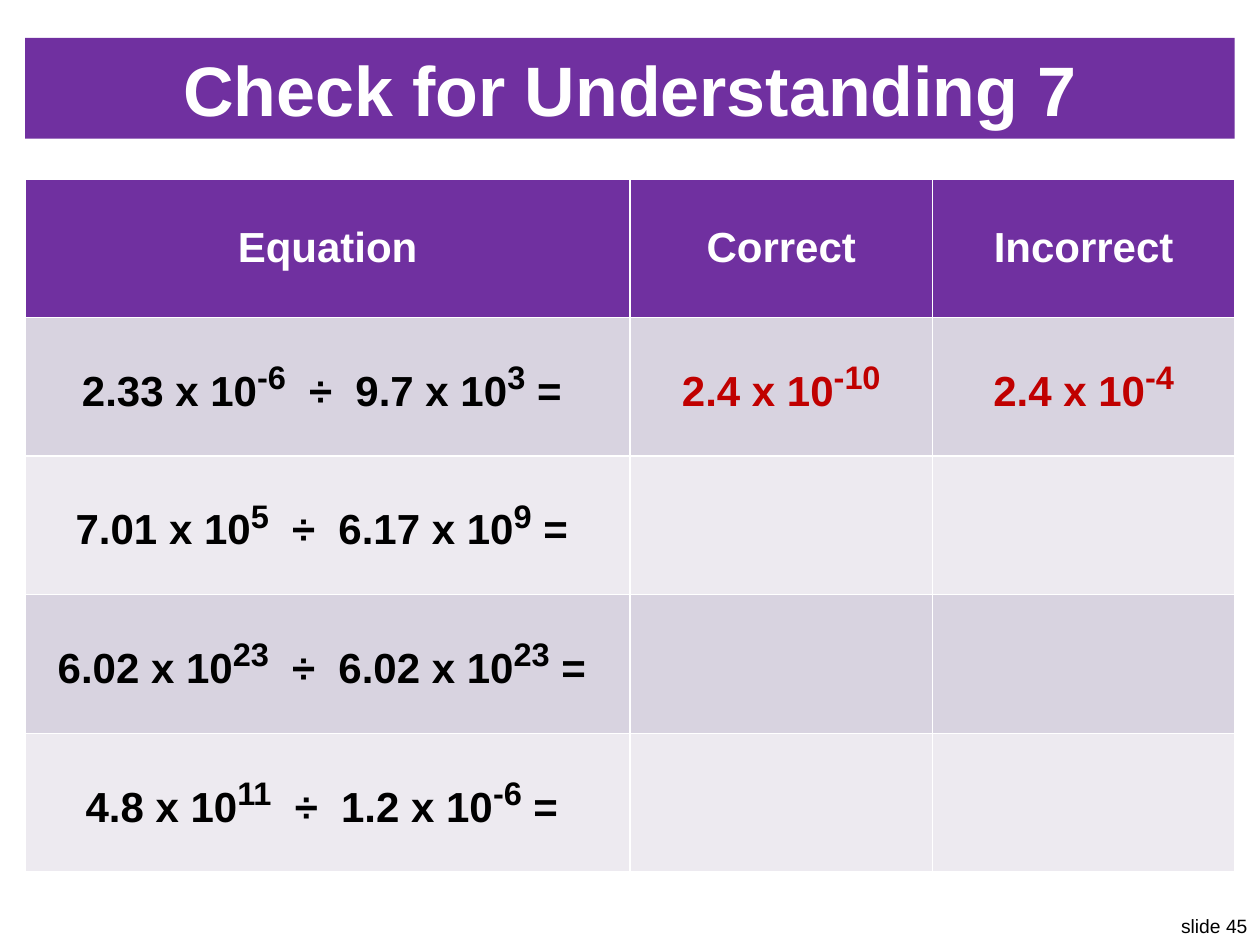
from pptx import Presentation
from pptx.dml.color import RGBColor
from pptx.enum.shapes import MSO_SHAPE
from pptx.enum.text import MSO_ANCHOR, MSO_AUTO_SIZE, PP_ALIGN
from pptx.util import Inches, Pt

RECTANGLE = MSO_SHAPE.RECTANGLE
MIDDLE = MSO_ANCHOR.MIDDLE
GROW = MSO_AUTO_SIZE.SHAPE_TO_FIT_TEXT
CENTER, RIGHT = PP_ALIGN.CENTER, PP_ALIGN.RIGHT

COLORS = {
    "purple": "7030A0",
    "white": "FFFFFF",
    "black": "000000",
    "red": "C00000",
    "band_dark": "D8D3E0",
    "band_light": "EDEAF0",
}
HEADERS = ["Equation", "Correct", "Incorrect"]
PROBLEMS = [
    ["2.33 x 10^-6^  ÷  9.7 x 10^3^ = ", "2.4 x 10^-10^", "2.4 x 10^-4^"],
    ["7.01 x 10^5^  ÷  6.17 x 10^9^ = ", "", ""],
    ["6.02 x 10^23^  ÷  6.02 x 10^23^ = ", "", ""],
    ["4.8 x 10^11^  ÷  1.2 x 10^-6^ = ", "", ""],
]
COLUMN_SHARES = [0.5, 0.25, 0.25]


def color(name):
    """Return the named colour."""
    return RGBColor.from_string(COLORS[name])


def fill_with(target, name):
    """Give a shape or cell a solid fill."""
    target.fill.solid()
    target.fill.fore_color.rgb = color(name)


def write_text(frame, text, size=24, power_size=32, ink="black", bold=True, align=CENTER):
    """Write one paragraph, raising the parts between carets as exponents."""
    paragraph = frame.paragraphs[0]
    paragraph.alignment = align
    for index, part in enumerate(text.split("^")):
        if not part:
            continue
        is_power = index % 2 == 1
        run = paragraph.add_run()
        run.text = part
        run.font.name = "Arial"
        run.font.size = Pt(power_size if is_power else size)
        run.font.bold = bold
        run.font.color.rgb = color(ink)
        if is_power:
            run._r.get_or_add_rPr().set("baseline", "30000")


def add_title(slide, left, top, width, height):
    """Add the title banner."""
    shape = slide.shapes.add_shape(RECTANGLE, left, top, width, height)
    shape.shadow.inherit = False
    shape.line.fill.background()
    fill_with(shape, "purple")
    shape.text_frame.word_wrap = True
    shape.text_frame.vertical_anchor = MIDDLE
    write_text(shape.text_frame, "Check for Understanding 7", size=40, ink="white")


def add_problem_table(slide, left, top, width, height):
    """Add the table of division problems and their answers."""
    rows = [HEADERS] + PROBLEMS
    table = slide.shapes.add_table(
        len(rows), len(HEADERS), left, top, width, height
    ).table
    for column, share in zip(table.columns, COLUMN_SHARES):
        column.width = int(width * share)
    for row_index, texts in enumerate(rows):
        is_header = row_index == 0
        band = "band_dark" if row_index % 2 else "band_light"
        for column_index, text in enumerate(texts):
            cell = table.cell(row_index, column_index)
            cell.vertical_anchor = MIDDLE
            fill_with(cell, "purple" if is_header else band)
            answer_ink = "red" if column_index else "black"
            write_text(cell.text_frame, text, ink="white" if is_header else answer_ink)


def add_slide_number(slide, left, top, width, height):
    """Add the slide number in the corner."""
    frame = slide.shapes.add_textbox(left, top, width, height).text_frame
    frame.word_wrap = False
    frame.auto_size = GROW
    write_text(frame, "slide 45", size=11, bold=False, align=RIGHT)


def main():
    """Build and save the slide."""
    presentation = Presentation()
    presentation.slide_width = Inches(10)
    presentation.slide_height = Inches(7.5)
    slide = presentation.slides.add_slide(presentation.slide_layouts[6])
    add_slide_number(slide, Inches(9.25), Inches(7.21), Inches(0.75), Inches(0.29))
    add_title(slide, Inches(0.2), Inches(0.3), Inches(9.6), Inches(0.8))
    add_problem_table(slide, Inches(0.2), Inches(1.42), Inches(9.6), Inches(5.5))
    presentation.save("out.pptx")


if __name__ == "__main__":
    main()
